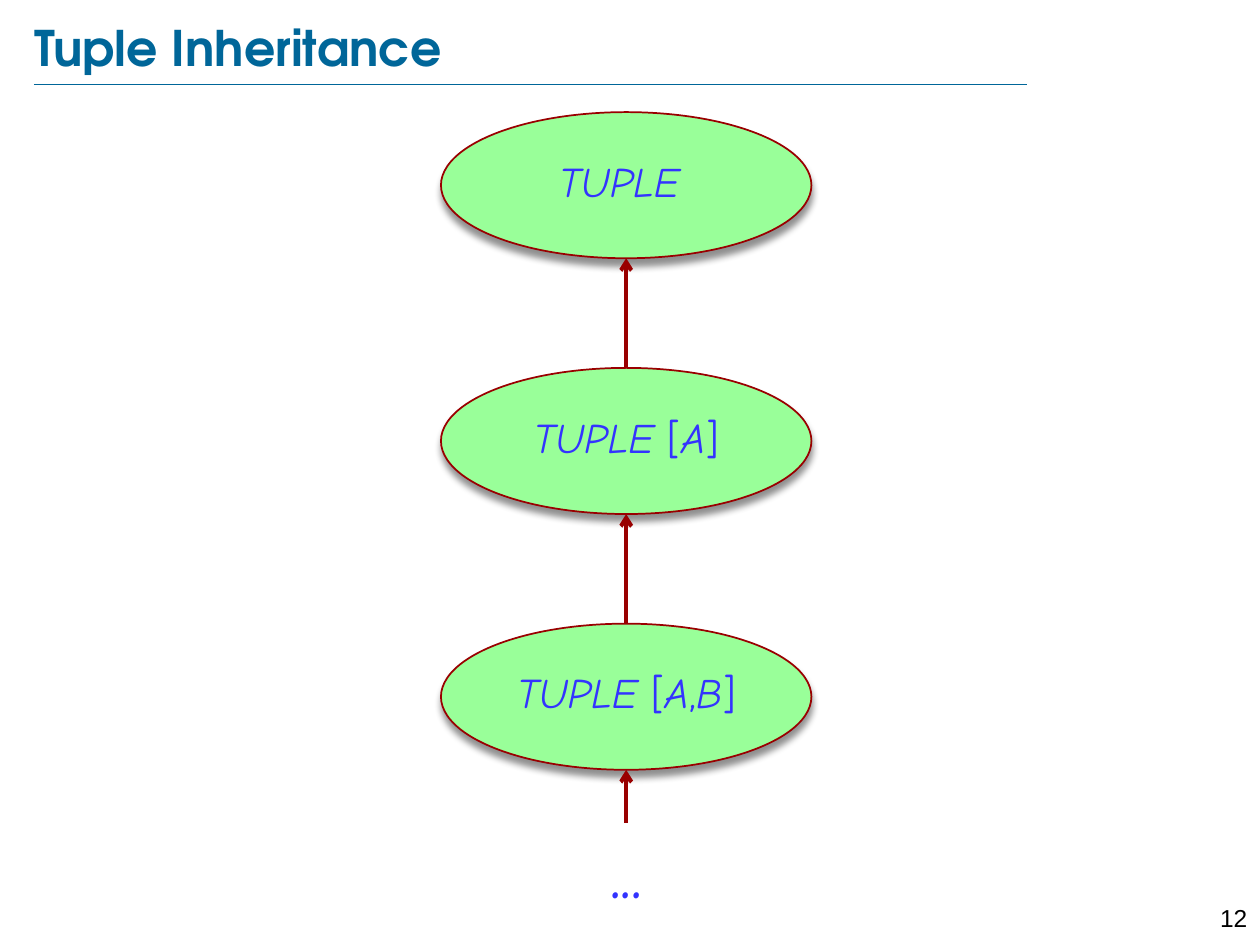
from lxml.etree import SubElement
from pptx import Presentation
from pptx.dml.color import RGBColor
from pptx.enum.shapes import MSO_CONNECTOR, MSO_SHAPE
from pptx.enum.text import MSO_ANCHOR, PP_ALIGN
from pptx.oxml import parse_xml
from pptx.oxml.ns import nsdecls, qn
from pptx.util import Inches, Pt

TITLE = "Tuple Inheritance"
PAGE = "12"
MORE = "..."
# Each class from the root down, as (text, italic) runs
CLASSES = [
    [("TUPLE ", True)],
    [("TUPLE", True), (" [", False), ("A", True), ("]", False)],
    [("TUPLE", True), (" [", False), ("A", True), (",", False), ("B", True), ("]", False)],
]
COLORS = {"title": "006699", "text": "3333FF", "fill": "99FF99",
          "line": "990000", "page": "000000"}
CLASS_FONT, TITLE_FONT, PAGE_FONT = "Comic Neue", "TeX Gyre Adventor", "Arial"

CENTER, TOP, PITCH = 4.97, 0.89, 2.03
OVAL_W, OVAL_H = 2.94, 1.16
LEFT, RULE_Y, RULE_END = 0.27, 0.67, 8.15
MORE_TOP = 6.53

SHADOW = (f'<a:effectLst {nsdecls("a")}><a:outerShdw blurRad="50800" dist="50800" '
          'dir="5400000" rotWithShape="0"><a:srgbClr val="000000">'
          '<a:alpha val="43000"/></a:srgbClr></a:outerShdw></a:effectLst>')


def color(name):
    return RGBColor.from_string(COLORS[name])


def style(run, font, size, name, bold=False, italic=False):
    f = run.font
    f.name, f.size, f.bold, f.italic = font, Pt(size), bold, italic
    f.color.rgb = color(name)


def add_text(slide, box, text, font, size, name, align, anchor, margins, bold=False):
    tf = slide.shapes.add_textbox(*map(Inches, box)).text_frame
    tf.word_wrap = True
    tf.vertical_anchor = anchor
    tf.margin_left = tf.margin_right = Inches(margins[0])
    tf.margin_top = tf.margin_bottom = Inches(margins[1])
    tf.text = text
    p = tf.paragraphs[0]
    p.alignment = align
    style(p.runs[0], font, size, name, bold)


def add_line(slide, start, end, name, width, arrow=False):
    cx = slide.shapes.add_connector(MSO_CONNECTOR.STRAIGHT,
                                    *map(Inches, (*start, *end)))
    cx.line.color.rgb = color(name)
    cx.line.width = Pt(width)
    if arrow:
        SubElement(cx.line._get_or_add_ln(), qn("a:tailEnd"), type="arrow")
    SubElement(cx._element.spPr, qn("a:effectLst"))


def add_class(slide, top, runs):
    sp = slide.shapes.add_shape(MSO_SHAPE.OVAL, Inches(CENTER - OVAL_W / 2),
                                Inches(top), Inches(OVAL_W), Inches(OVAL_H))
    sp.fill.solid()
    sp.fill.fore_color.rgb = color("fill")
    sp.line.color.rgb = color("line")
    sp.line.width = Pt(1)
    sp._element.spPr.append(parse_xml(SHADOW))
    tf = sp.text_frame
    tf.vertical_anchor = MSO_ANCHOR.MIDDLE
    tf.margin_left = tf.margin_right = 0
    p = tf.paragraphs[0]
    p.alignment = PP_ALIGN.CENTER
    p.line_spacing = 0.8
    for text, italic in runs:
        r = p.add_run()
        r.text = text
        style(r, CLASS_FONT, 24, "text", italic=italic)


def main():
    prs = Presentation()
    prs.slide_width, prs.slide_height = Inches(10), Inches(7.5)
    slide = prs.slides.add_slide(prs.slide_layouts[6])

    add_line(slide, (LEFT, RULE_Y), (RULE_END, RULE_Y), "title", 0.25)
    add_text(slide, (9.35, 7.16, 0.55, 0.24), PAGE, PAGE_FONT, 14, "page",
             PP_ALIGN.RIGHT, MSO_ANCHOR.MIDDLE, (0, 0))
    add_text(slide, (LEFT, 0.13, 8.69, 0.48), TITLE, TITLE_FONT, 28, "title",
             PP_ALIGN.LEFT, MSO_ANCHOR.MIDDLE, (0, 0), bold=True)

    tops = [TOP + i * PITCH for i in range(len(CLASSES))]
    for top, runs in zip(tops, CLASSES):
        add_class(slide, top, runs)
    for parent, child in zip(tops, tops[1:] + [MORE_TOP]):
        add_line(slide, (CENTER, child), (CENTER, parent + OVAL_H), "line", 2.25, arrow=True)
    add_text(slide, (CENTER - 0.34, MORE_TOP, 0.68, 0.77), MORE, CLASS_FONT, 40, "text",
             PP_ALIGN.CENTER, MSO_ANCHOR.TOP, (0.1, 0.05))
    prs.save("out.pptx")


if __name__ == "__main__":
    main()
